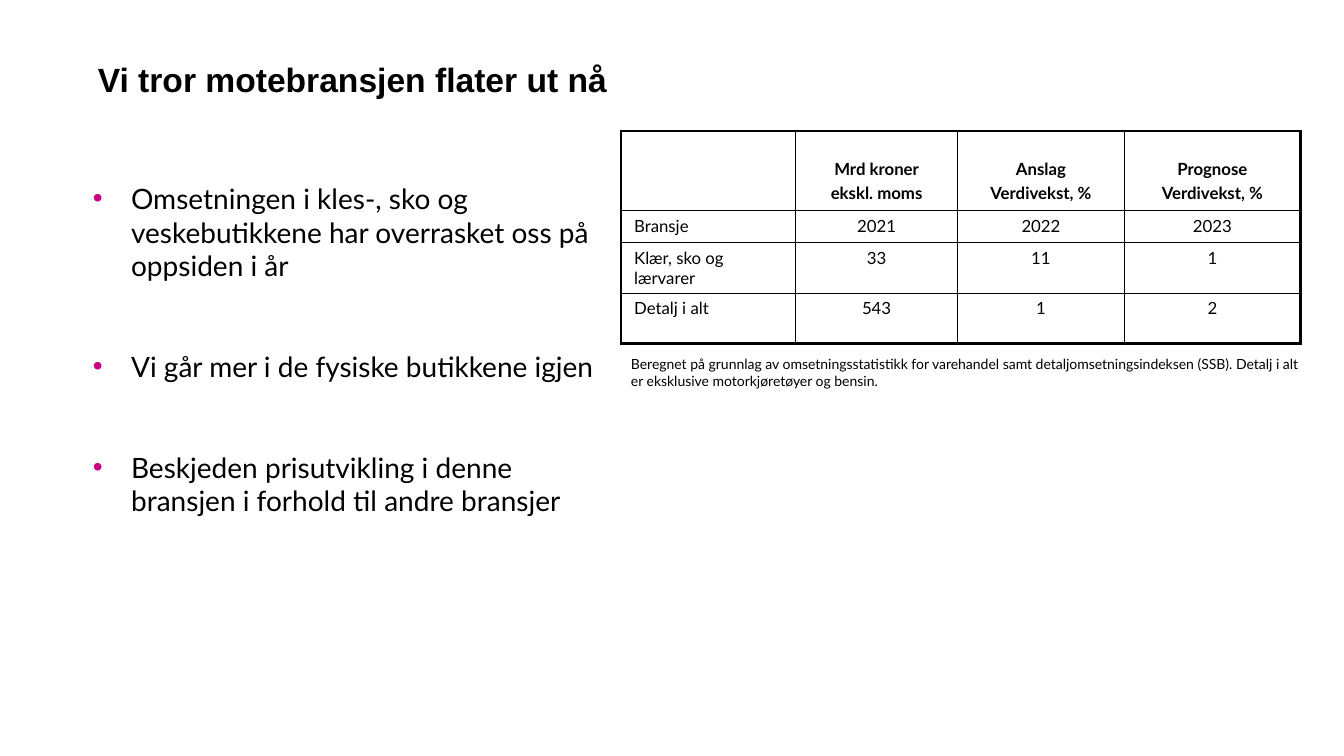
import dataclasses
import typing

import lxml.etree
import pptx
import pptx.dml.color
import pptx.enum.text
import pptx.oxml.ns
import pptx.util

PX = 9144  # 100 px to the inch
BLACK = pptx.dml.color.RGBColor(0x00, 0x00, 0x00)
PINK = pptx.dml.color.RGBColor(0xC9, 0x00, 0x7F)
ALIGN = pptx.enum.text.PP_ALIGN
ANCHOR = pptx.enum.text.MSO_ANCHOR
THIN, THICK = 1, 2.25

TITLE = "Vi tror motebransjen flater ut nå"
POINTS = [
    "Omsetningen i kles-, sko og veskebutikkene har overrasket oss på oppsiden i år",
    "Vi går mer i de fysiske butikkene igjen",
    "Beskjeden prisutvikling i denne bransjen i forhold til andre bransjer",
]
NOTE = (
    "Beregnet på grunnlag av omsetningsstatistikk for varehandel samt "
    "detaljomsetningsindeksen (SSB). Detalj i alt er eksklusive motorkjøretøyer og bensin."
)


@dataclasses.dataclass
class Box:
    left: int
    top: int
    width: int
    height: int

    def emu(self) -> list[int]:
        return [side * PX for side in dataclasses.astuple(self)]


@dataclasses.dataclass
class Column:
    width: int
    head: list[str]
    cells: list[str]
    align: typing.Any = ALIGN.CENTER


COLUMNS = [
    Column(173, [], ["Bransje", "Klær, sko og lærvarer", "Detalj i alt"], ALIGN.LEFT),
    Column(161, ["Mrd kroner", "ekskl. moms"], ["2021", "33", "543"]),
    Column(165, ["Anslag", "Verdivekst, %"], ["2022", "11", "1"]),
    Column(175, ["Prognose", "Verdivekst, %"], ["2023", "1", "2"]),
]
ROWS = [79, 32, 50, 50]


def child(parent: typing.Any, tag: str, **attrs: str) -> typing.Any:
    return lxml.etree.SubElement(parent, pptx.oxml.ns.qn(tag), attrs)


def write(frame: typing.Any, lines: list[str], size: int, font: str = "Lato",
          bold: bool = False, align: typing.Any = ALIGN.LEFT, gap: float = 0,
          spacing: typing.Any = 1.0, bullet: bool = False) -> None:
    """Put one paragraph per line into the frame, with gap points between them."""
    frame.word_wrap = True
    for i, line in enumerate(lines):
        para = frame.add_paragraph() if i else frame.paragraphs[0]
        para.alignment = align
        para.line_spacing = spacing
        para.space_before = pptx.util.Pt(gap if i else 0)
        para.space_after = pptx.util.Pt(0)
        if bullet:
            mark(para)
        run = para.add_run()
        run.text = line
        run.font.name = font
        run.font.size = pptx.util.Pt(size)
        run.font.bold = bold
        run.font.color.rgb = BLACK


def mark(para: typing.Any) -> None:
    """Give the paragraph a pink bullet and a hanging indent."""
    props = para._p.get_or_add_pPr()
    props.set("marL", str(38 * PX))
    props.set("indent", str(-38 * PX))
    child(child(props, "a:buClr"), "a:srgbClr", val=str(PINK))
    child(props, "a:buFont", typeface="Arial")
    child(props, "a:buChar", char="•")


def place(shape: typing.Any, box: Box, anchor: typing.Any, inset: int = 0) -> typing.Any:
    """Move a placeholder, set its top inset and return its text frame."""
    shape.left, shape.top, shape.width, shape.height = box.emu()
    frame = shape.text_frame
    frame.auto_size = pptx.enum.text.MSO_AUTO_SIZE.NONE
    frame.vertical_anchor = anchor
    frame.margin_left = frame.margin_right = frame.margin_bottom = 0
    frame.margin_top = inset * PX
    return frame


def border(cell: typing.Any, sides: dict[str, float]) -> None:
    props = cell._tc.get_or_add_tcPr()
    for side, width in sides.items():
        line = child(props, f"a:ln{side}", w=str(pptx.util.Pt(width)))
        child(child(line, "a:solidFill"), "a:srgbClr", val=str(BLACK))


def draw_table(slide: typing.Any, left: int, top: int) -> None:
    box = Box(left, top, sum(col.width for col in COLUMNS), sum(ROWS))
    table = slide.shapes.add_table(len(ROWS), len(COLUMNS), *box.emu()).table
    table.first_row = table.horz_banding = False
    for r, height in enumerate(ROWS):
        table.rows[r].height = height * PX
    for c, col in enumerate(COLUMNS):
        table.columns[c].width = col.width * PX
        texts = [col.head] + [[text] for text in col.cells]
        for r, lines in enumerate(texts):
            cell = table.cell(r, c)
            cell.margin_left = cell.margin_right = 13 * PX
            cell.margin_top = (5 if r else 28) * PX
            cell.margin_bottom = 5 * PX
            border(cell, {
                "L": THIN,
                "R": THICK if c == len(COLUMNS) - 1 else THIN,
                "T": THIN if r else THICK,
                "B": THICK if r == len(ROWS) - 1 else THIN,
            })
            cell.fill.background()
            write(cell.text_frame, lines, 12, bold=r == 0, align=col.align, gap=2.4)


def main() -> None:
    deck = pptx.Presentation()
    deck.slide_width, deck.slide_height = 1333 * PX, 750 * PX
    slide = deck.slides.add_slide(deck.slide_layouts[1])
    title, body = slide.placeholders
    frame = place(title, Box(97, 26, 1150, 99), ANCHOR.MIDDLE)
    write(frame, [TITLE], 24, font="Arial", bold=True, spacing=pptx.util.Pt(33))
    frame = place(body, Box(92, 130, 502, 522), ANCHOR.TOP, inset=50)
    write(frame, POINTS, 20, gap=48, bullet=True)
    draw_table(slide, 616, 130)
    note = slide.shapes.add_textbox(*Box(616, 348, 684, 44).emu())
    write(note.text_frame, [NOTE], 10)
    deck.save("out.pptx")


if __name__ == "__main__":
    main()
